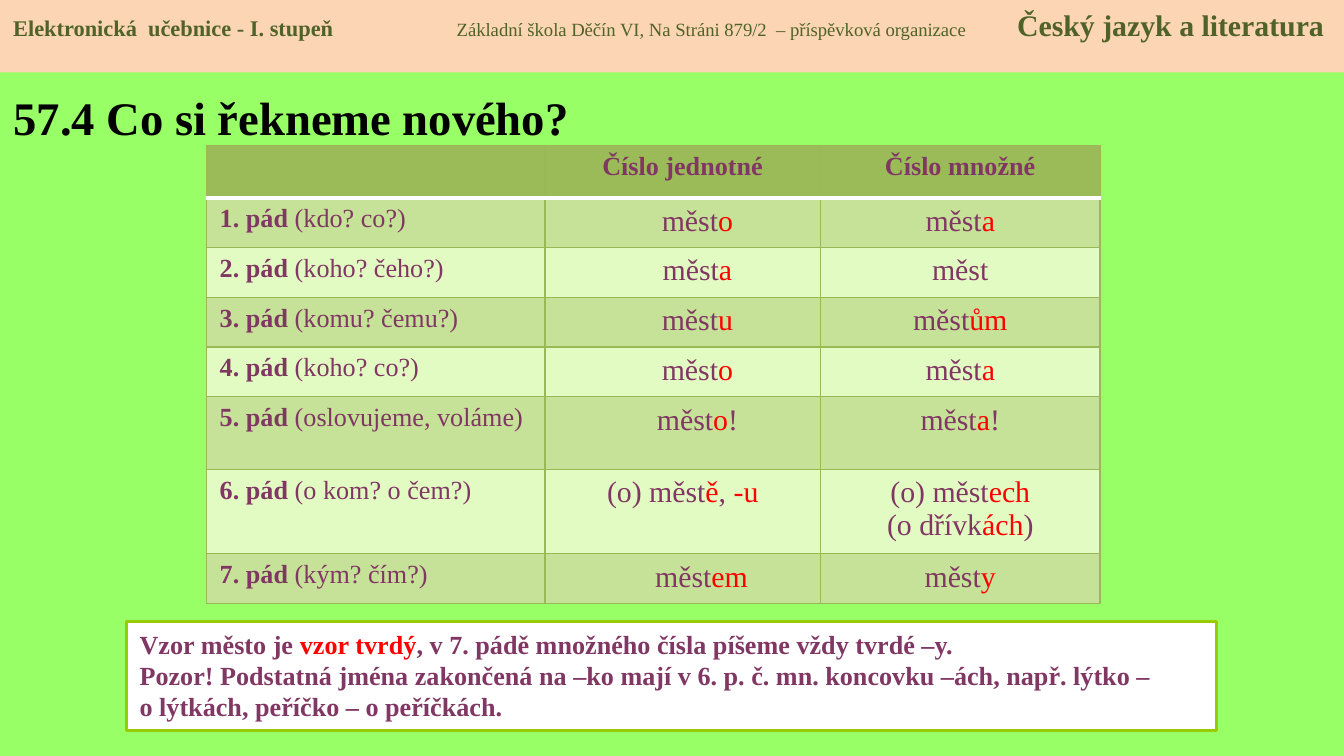
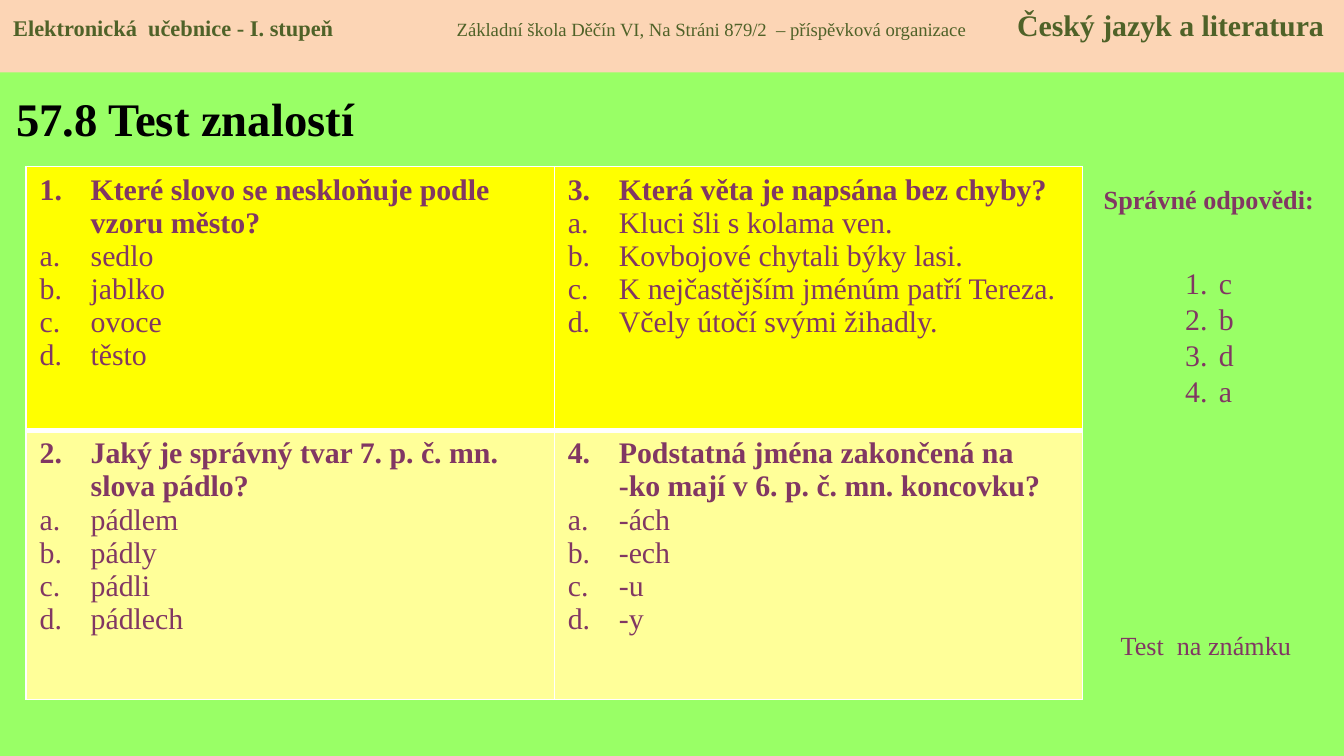
from lxml import etree
from pptx import Presentation
from pptx.dml.color import RGBColor
from pptx.enum.shapes import MSO_SHAPE
from pptx.enum.text import MSO_ANCHOR, PP_ALIGN
from pptx.oxml.ns import qn
from pptx.util import Inches, Pt

RECT = MSO_SHAPE.RECTANGLE
TOP, MIDDLE = MSO_ANCHOR.TOP, MSO_ANCHOR.MIDDLE
LEFT, CENTER = PP_ALIGN.LEFT, PP_ALIGN.CENTER
WIDE = Inches(10)
HIGH = WIDE * 9 // 16
FACE = "Times New Roman"
GREEN, PEACH, OLIVE = "99FF66", "FCD5B5", "4F6228"
PLUM, RED, BLACK, WHITE = "813763", "FF0000", "000000", "FFFFFF"
MOSS, LEAF, PALE, EDGE, LIME = "9BBB59", "C6E198", "E2FBC2", "98B955", "99CC00"
YELLOW, CREAM = "FFFF00", "FFFF99"

CASES = [
    ("1. pád* (kdo? co?)", "měst*o", "měst*a"),
    ("2. pád* (koho? čeho?)", "měst*a", "měst"),
    ("3. pád* (komu? čemu?)", "měst*u", "měst*ům"),
    ("4. pád* (koho? co?)", "měst*o", "měst*a"),
    ("5. pád* (oslovujeme, voláme)", "měst*o*!", "měst*a*!"),
    ("6. pád* (o kom? o čem?)", "(o) měst*ě*, *-u", "(o) měst*ech|(o dřívk*ách*)"),
    ("7. pád* (kým? čím?)", "měst*em", "měst*y"),
]
NOTE = [
    "Vzor město je *vzor tvrdý*, v 7. pádě množného čísla píšeme vždy tvrdé –y.",
    "Pozor! Podstatná jména zakončená na –ko mají v 6. p. č. mn. koncovku –ách, "
    "např. lýtko – \vo lýtkách, peříčko – o peříčkách.",
]
QUIZ = [
    ("Které slovo se neskloňuje podle vzoru město?",
     "sedlo", "jablko", "ovoce", "těsto"),
    ("Jaký je správný tvar 7. p. č. mn. slova pádlo?",
     "pádlem", "pádly", "pádli", "pádlech"),
    ("Která věta je napsána bez chyby?",
     "Kluci šli s kolama ven.", "Kovbojové chytali býky lasi.",
     "K nejčastějším jménúm patří Tereza.", "Včely útočí svými žihadly."),
    ("Podstatná jména zakončená na \v-ko mají v 6. p. č. mn. koncovku?",
     "-ách", "-ech", "-u", "-y"),
]


def tint(code):
    return RGBColor.from_string(code)


def spot(x, y, w, h):
    return [int(part * side / 100)
            for part, side in zip((x, y, w, h), (WIDE, HIGH, WIDE, HIGH))]


def style(font, size, color=PLUM, bold=False):
    font.name = FACE
    font.size = Pt(size)
    font.bold = bold
    font.color.rgb = tint(color)


def redden(font):
    font.color.rgb = tint(RED)


def thin(font):
    font.bold = False


def write(par, text, size, color=PLUM, bold=False, align=LEFT, accent=redden):
    par.alignment = align
    style(par.font, size, color, bold)
    bits = text.split("*")
    if len(bits) == 1:
        par.text = text
        return
    for i, bit in enumerate(bits):
        if bit:
            run = par.add_run()
            run.text = bit
            if i % 2:
                accent(run.font)


def lines(frame, count):
    while len(frame.paragraphs) < count:
        frame.add_paragraph()
    return frame.paragraphs


def number(par, kind, indent, start=1):
    props = par._p.get_or_add_pPr()
    props.set("marL", str(Inches(indent)))
    props.set("indent", str(-Inches(indent)))
    mark = etree.SubElement(props, qn("a:buAutoNum"), type=kind)
    if start > 1:
        mark.set("startAt", str(start))


def block(slide, place, fill, edge=None):
    shape = slide.shapes.add_shape(RECT, *spot(*place))
    shape.shadow.inherit = False
    shape.fill.solid()
    shape.fill.fore_color.rgb = tint(fill)
    if edge:
        shape.line.color.rgb = tint(edge)
        shape.line.width = Pt(1.5)
    else:
        shape.line.fill.background()
    shape.text_frame.vertical_anchor = TOP
    return shape.text_frame


def label(slide, place, text, **look):
    frame = slide.shapes.add_textbox(*spot(*place)).text_frame
    frame.word_wrap = True
    write(frame.paragraphs[0], text, 14, **look)


def header(slide):
    par = block(slide, (0, 0, 100, 9.6), PEACH).paragraphs[0]
    par.alignment = LEFT
    tabs = etree.SubElement(par._p.get_or_add_pPr(), qn("a:tabLst"))
    for stop in (3.3, 7.47):
        etree.SubElement(tabs, qn("a:tab"), pos=str(Inches(stop)), algn="l")
    for text, size, bold in (
        ("Elektronická  učebnice - I. stupeň\t", 12, True),
        ("Základní škola Děčín VI, Na Stráni 879/2  – příspěvková organizace\t", 10, False),
        ("Český jazyk a literatura", 16, True),
    ):
        run = par.add_run()
        run.text = text
        style(run.font, size, OLIVE, bold)


def page(deck, text, place):
    slide = deck.slides.add_slide(deck.slide_layouts[0])
    spare = slide.placeholders[1].element
    spare.getparent().remove(spare)
    title = slide.shapes.title
    title.left, title.top, title.width, title.height = spot(*place)
    title.text_frame.vertical_anchor = MIDDLE
    write(title.text_frame.paragraphs[0], text, 25, BLACK, True)
    header(slide)
    return slide


def share(items, name, weights, total):
    for item, weight in zip(items, weights):
        setattr(item, name, int(total * weight / sum(weights)))


def grid(slide, place, cols, rows):
    area = spot(*place)
    table = slide.shapes.add_table(len(rows), len(cols), *area).table
    table.first_row = table.horz_banding = False
    share(table.columns, "width", cols, area[2])
    share(table.rows, "height", rows, area[3])
    return table


def paint(cell, fill, edge, width, **special):
    props = cell._tc.get_or_add_tcPr()
    for side in "LRTB":
        color, size = special.get(side, (edge, width))
        line = etree.SubElement(props, qn("a:ln" + side), w=str(Pt(size)))
        solid = etree.SubElement(line, qn("a:solidFill"))
        etree.SubElement(solid, qn("a:srgbClr"), val=color)
    cell.fill.solid()
    cell.fill.fore_color.rgb = tint(fill)


def cases(slide):
    table = grid(slide, (15.35, 19.25, 66.5, 60.6), (252, 205, 208),
                 (39, 37, 37, 37, 37, 54, 63, 37))
    rule = (WHITE, 2)
    for c, text in enumerate(("", "Číslo jednotné", "Číslo množné")):
        cell = table.cell(0, c)
        paint(cell, MOSS, EDGE, 0.75, B=rule)
        write(cell.text_frame.paragraphs[0], text, 14, bold=True, align=CENTER)
    for r, row in enumerate(CASES, 1):
        for c, text in enumerate(row):
            cell = table.cell(r, c)
            paint(cell, LEAF if r % 2 else PALE, EDGE, 0.75,
                  **({"T": rule} if r == 1 else {}))
            if c == 1 and text.startswith("měst"):
                cell.margin_left = Inches(0.38 if r == len(CASES) else 0.32)
            parts = text.split("|")
            for par, part in zip(lines(cell.text_frame, len(parts)), parts):
                if c:
                    write(par, part, 16, align=CENTER)
                else:
                    write(par, part, 14, bold=True, accent=thin)


def quiz(slide):
    table = grid(slide, (1.95, 22.05, 78.6, 70.5), (1, 1), (196, 200))
    rule = (WHITE, 3)
    for i, texts in enumerate(QUIZ):
        c, r = divmod(i, 2)
        cell = table.cell(r, c)
        paint(cell, CREAM if r else YELLOW, WHITE, 1,
              **{"T" if r else "B": rule})
        for n, par in enumerate(lines(cell.text_frame, len(texts))):
            if n:
                number(par, "alphaLcPeriod", 0.38)
            else:
                number(par, "arabicPeriod", 0.38, i + 1)
            write(par, texts[n], 16, bold=n == 0)


def answers(slide):
    label(slide, (80.5, 23.45, 18.9, 6.05), "Správné odpovědi:",
          bold=True, align=CENTER)
    frame = slide.shapes.add_textbox(*spot(87.2, 29.35, 5.5, 35.4)).text_frame
    frame.word_wrap = True
    frame.margin_top = Inches(0.32)
    for par, text in zip(lines(frame, 4), "cbda"):
        number(par, "arabicPeriod", 0.25)
        write(par, text, 16)
    label(slide, (82.4, 82.35, 15.7, 6.05), "Test  na známku")


def main():
    deck = Presentation()
    deck.slide_width, deck.slide_height = WIDE, HIGH
    back = deck.slide_master.background.fill
    back.solid()
    back.fore_color.rgb = tint(GREEN)

    slide = page(deck, "57.4 Co si řekneme nového?", (0, 9.6, 46.9, 11.6))
    cases(slide)
    frame = block(slide, (9.4, 82.2, 81.1, 14.4), WHITE, LIME)
    for par, text in zip(lines(frame, len(NOTE)), NOTE):
        write(par, text, 14, bold=True)

    slide = page(deck, "57.8 Test znalostí", (0.2, 9.75, 31.9, 11.6))
    quiz(slide)
    answers(slide)
    deck.save("out.pptx")


if __name__ == "__main__":
    main()
